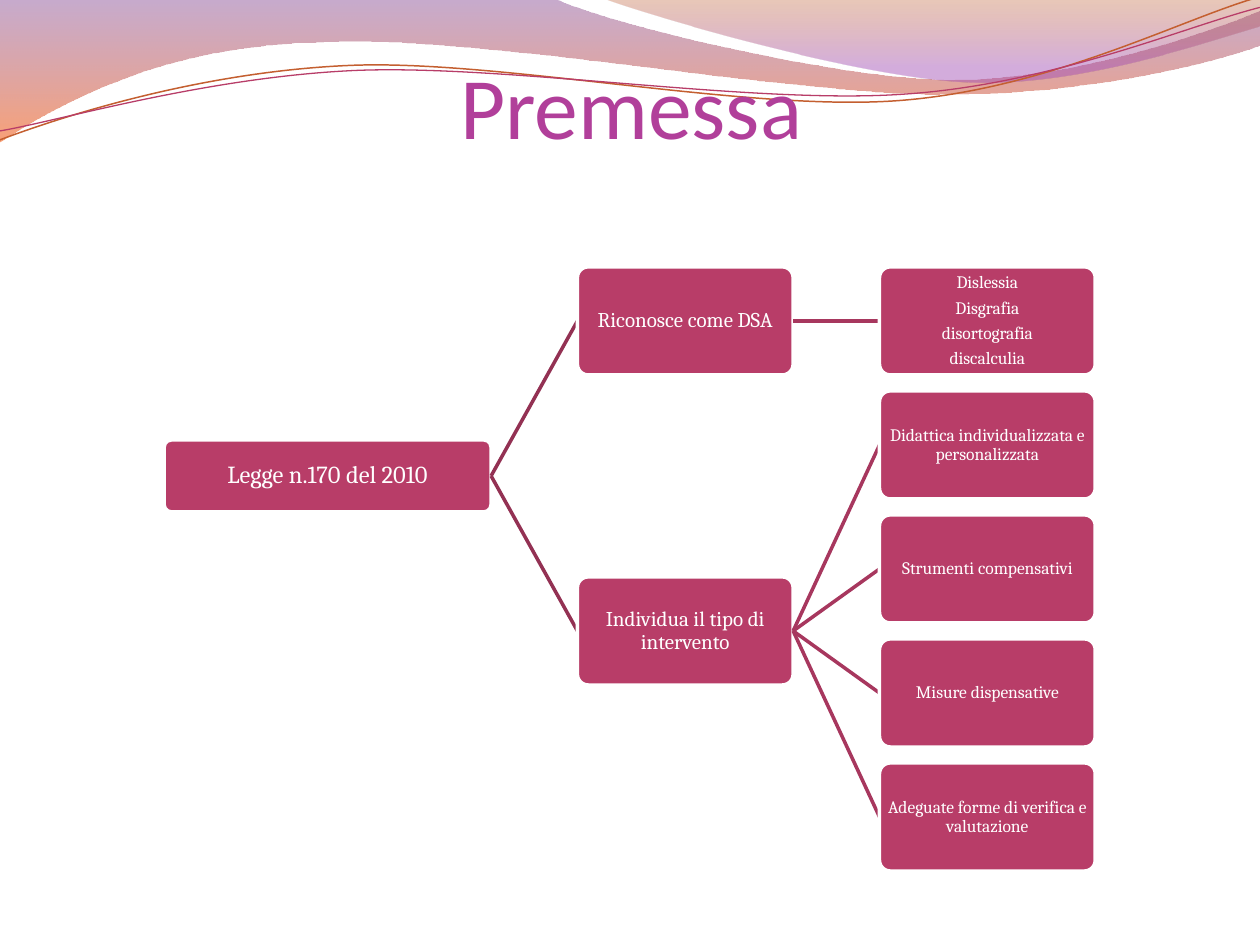
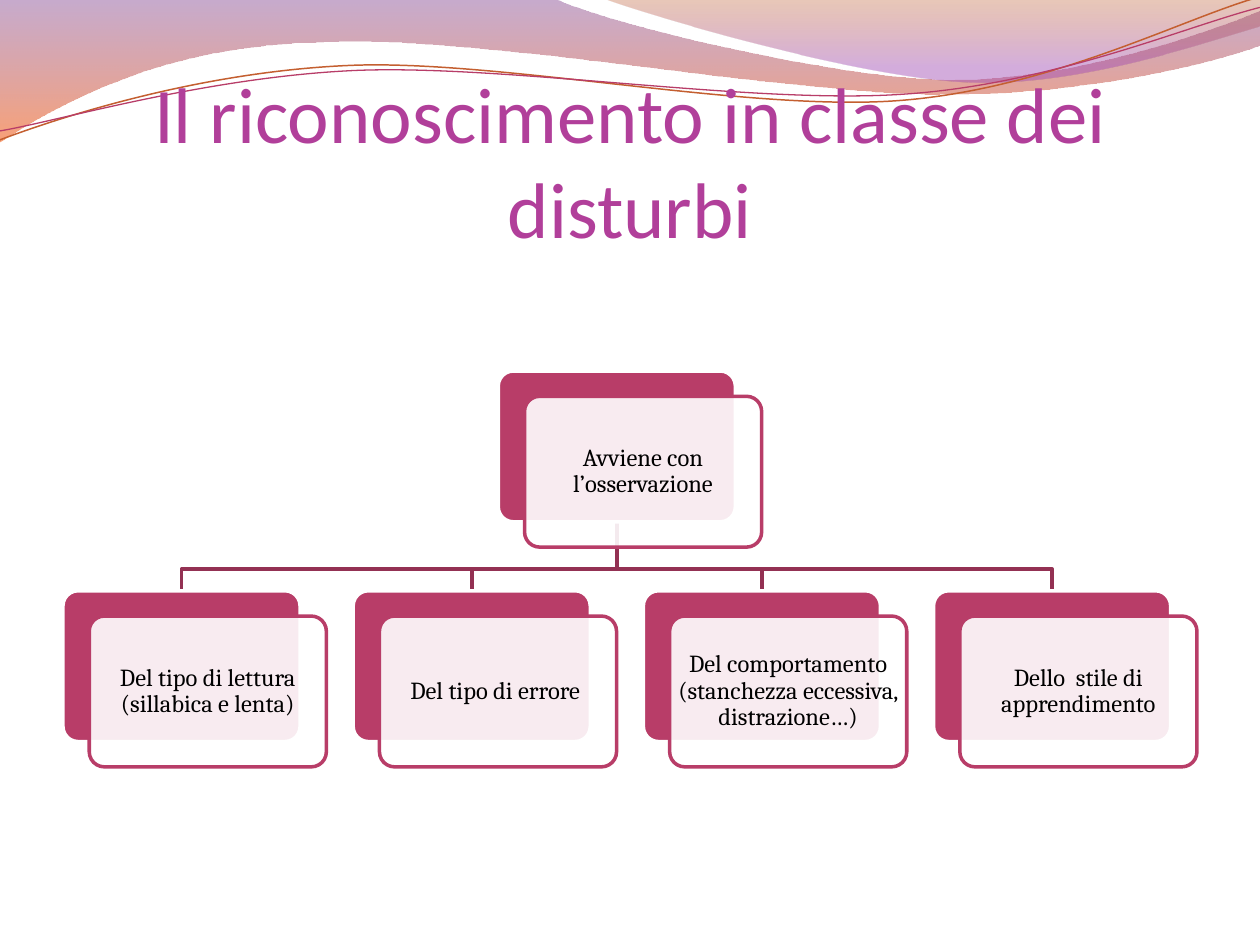
import pptx
import pptx.dml.color
import pptx.enum.shapes
import pptx.enum.text
import pptx.oxml.ns
import pptx.util
from lxml import etree

Cm, Pt = pptx.util.Cm, pptx.util.Pt
RGBColor = pptx.dml.color.RGBColor
qn = pptx.oxml.ns.qn
MIDDLE = pptx.enum.text.MSO_ANCHOR.MIDDLE
CENTER = pptx.enum.text.PP_ALIGN.CENTER

WHITE = RGBColor(0xFF, 0xFF, 0xFF)
BLACK = RGBColor(0x00, 0x00, 0x00)
TITLE = RGBColor(0xB1, 0x3F, 0x9A)
ROSE = RGBColor(0xB8, 0x3D, 0x68)
ROSE_DARK = RGBColor(0x93, 0x31, 0x53)
ROSE_MID = RGBColor(0xA7, 0x37, 0x5E)
ORANGE = RGBColor(0xC4, 0x5F, 0x30)
PURPLE = RGBColor(0x83, 0x45, 0x91)
FLAME = RGBColor(0xF3, 0x53, 0x07)
RUST = RGBColor(0xB7, 0x49, 0x15)
VIOLET = RGBColor(0xA1, 0x4B, 0xB4)

# Outlines in cm: two numbers are a corner, six are a Bézier curve.
# Gradient stops: position %, colour, opacity %.
BANDS = [
    ([(0, -0.02), (11.19, -0.02), (12.09, 0.43, 16.87, 1.6, 19.25, 1.6),
      (21.67, 1.6, 24.33, 0.66, 25.4, 0.23), (25.42, 0.91),
      (24.97, 1.12, 22.1, 1.93, 18.95, 1.9), (15.8, 1.9, 9.7, 0.71, 6.53, 0.86),
      (3.28, 0.89, 1.17, 2.11, -0.02, 2.87)],
     [(0, PURPLE, 45), (100, FLAME, 55)]),
    ([(12.17, -0.02), (12.93, 0.28, 17.32, 1.57, 19.53, 1.65),
      (21.74, 1.75, 24.41, 0.81, 25.4, 0.53), (25.4, 0)],
     [(0, RUST, 30), (80, VIOLET, 45)]),
]
WAVES = [
    ([(0, 2.82), (1.22, 2.36, 4.01, 1.45, 7.04, 1.32),
      (10.03, 1.19, 15.06, 2.26, 18.11, 2.03),
      (21.16, 1.8, 23.83, 0.38, 25.35, -0.05)], ORANGE, 0.85),
    ([(0, 2.64), (1.19, 2.44, 4.17, 1.55, 7.19, 1.42),
      (10.24, 1.3, 15.16, 2.11, 18.21, 1.9),
      (21.23, 1.7, 23.9, 0.53, 25.4, 0.15)], ROSE, 0.75),
]


def add_outline(s, segments, closed=False, color=None, width=0):
    """Draw corners and Bézier curves as one unfilled freeform."""
    corners = [(Cm(seg[-2]), Cm(seg[-1])) for seg in segments]
    fb = s.shapes.build_freeform(*corners[0])
    fb.add_line_segments(corners[1:], close=closed)
    sp = fb.convert_to_shape()
    for seg, line_to in zip(segments[1:], list(sp.element.iter(qn("a:lnTo")))):
        if len(seg) == 6:
            curve = etree.Element(qn("a:cubicBezTo"))
            for x, y in zip(seg[::2], seg[1::2]):
                etree.SubElement(curve, qn("a:pt"),
                                 x=str(Cm(x) - sp.left), y=str(Cm(y) - sp.top))
            line_to.getparent().replace(line_to, curve)
    sp.shadow.inherit = False
    sp.fill.background()
    if color is None:
        sp.line.fill.background()
    else:
        sp.line.color.rgb = color
        sp.line.width = Pt(width)
    return sp


def add_box(s, x, y, w, h, fill, line, text="", size=14, color=WHITE, inset=0):
    sp = s.shapes.add_shape(pptx.enum.shapes.MSO_SHAPE.ROUNDED_RECTANGLE,
                            Cm(x), Cm(y), Cm(w), Cm(h))
    sp.adjustments[0] = 0.1
    sp.shadow.inherit = False
    sp.fill.solid()
    sp.fill.fore_color.rgb = fill
    sp.line.color.rgb = line
    sp.line.width = Pt(2)
    if text:
        tf = sp.text_frame
        tf.text = text
        tf.word_wrap = True
        tf.vertical_anchor = MIDDLE
        tf.margin_left = tf.margin_right = tf.margin_top = tf.margin_bottom = Cm(inset)
        for p in tf.paragraphs:
            p.alignment = CENTER
            p.line_spacing = 0.9
            p.space_after = Pt(0.35 * size)
            for r in p.runs:
                r.font.name = "Cambria"
                r.font.size = Pt(size)
                r.font.color.rgb = color
    return sp


prs = pptx.Presentation()
prs.slide_width, prs.slide_height = Cm(25.4), Cm(19.05)

# Shared bands, waves and title
slides = []
for title, left, top, size in [
        ("Premessa", 1.3, 0, 50),
        ("Il riconoscimento in classe dei disturbi", 1.27, 1.95, 45)]:
    s = prs.slides.add_slide(prs.slide_layouts[5])
    for segments, stops in BANDS:
        sp = add_outline(s, segments, closed=True)
        spPr = sp.element.spPr
        grad = etree.Element(qn("a:gradFill"), rotWithShape="1")
        gsLst = etree.SubElement(grad, qn("a:gsLst"))
        for pos, color, opacity in stops:
            gs = etree.SubElement(gsLst, qn("a:gs"), pos=str(pos * 1000))
            clr = etree.SubElement(gs, qn("a:srgbClr"), val=str(color))
            etree.SubElement(clr, qn("a:alpha"), val=str(opacity * 1000))
        etree.SubElement(grad, qn("a:lin"), ang="5400000", scaled="1")
        spPr.replace(spPr.find(qn("a:noFill")), grad)
    for segments, color, width in WAVES:
        add_outline(s, segments, color=color, width=width)

    ph = s.shapes.title
    ph.element.getparent().append(ph.element)
    ph.left, ph.top, ph.width, ph.height = Cm(left), Cm(top), Cm(22.86), Cm(3.17)
    tf = ph.text_frame
    tf.text = title
    tf.word_wrap = True
    tf.auto_size = pptx.enum.text.MSO_AUTO_SIZE.NONE
    tf.vertical_anchor = pptx.enum.text.MSO_ANCHOR.BOTTOM
    tf.margin_left = tf.margin_right = tf.margin_bottom = 0
    tf.margin_top = Cm(0.13)
    p = tf.paragraphs[0]
    p.alignment = CENTER
    font = p.runs[0].font
    font.name, font.size, font.color.rgb = "Calibri", Pt(size), TITLE
    slides.append(s)

# Slide 1: the law, its two provisions and their details
s = slides[0]
BRANCHES = [
    ("Riconosce come DSA", ["Dislessia\nDisgrafia\ndisortografia\ndiscalculia"]),
    ("Individua il tipo di intervento",
     ["Didattica individualizzata e personalizzata", "Strumenti compensativi",
      "Misure dispensative", "Adeguate forme di verifica e valutazione"]),
]
BOX_W, BOX_H, ROW_TOP, ROW_STEP = 4.35, 2.18, 5.38, 2.5
root = add_box(s, 3.31, 8.87, 6.59, 1.45, ROSE, WHITE, "Legge n.170 del 2010", 14)
links = []
row = 0
for provision, details in BRANCHES:
    middle = row + (len(details) - 1) / 2
    branch = add_box(s, 11.64, ROW_TOP + middle * ROW_STEP, BOX_W, BOX_H,
                     ROSE, WHITE, provision, 12)
    links.append((root, branch, ROSE_DARK))
    for detail in details:
        leaf = add_box(s, 17.73, ROW_TOP + row * ROW_STEP, BOX_W, BOX_H,
                       ROSE, WHITE, detail, 10)
        links.append((branch, leaf, ROSE_MID))
        row += 1
for parent, child, color in links:
    cn = s.shapes.add_connector(pptx.enum.shapes.MSO_CONNECTOR.STRAIGHT, 0, 0, 0, 0)
    cn.begin_connect(parent, 3)
    cn.end_connect(child, 1)
    cn.line.color.rgb = color
    cn.line.width = Pt(2)
    etree.SubElement(cn.element.spPr, qn("a:effectLst"))
    child.element.addprevious(cn.element)

# Slide 2: observation and what it looks at
s = slides[1]
ASPECTS = ["Del tipo di lettura (sillabica e lenta)", "Del tipo di errore ",
           "Del comportamento (stanchezza eccessiva, distrazione…)",
           "Dello  stile di apprendimento"]
CARD_W, CARD_H, ASPECT_TOP = 4.78, 3.04, 11.91
lefts = [1.27 + 5.85 * i for i in range(len(ASPECTS))]
root_left = sum(lefts) / len(lefts)
trunk = root_left + CARD_W / 2
for left in reversed(lefts):
    x = left + CARD_W / 2
    add_outline(s, [(trunk, 10.52), (trunk, 11.47), (x, 11.47), (x, ASPECT_TOP)],
                color=ROSE_DARK, width=2)
cards = [(root_left, 7.48, "Avviene con l’osservazione")]
cards += [(left, ASPECT_TOP, aspect) for left, aspect in zip(lefts, ASPECTS)]
for x, y, text in cards:
    add_box(s, x, y, CARD_W, CARD_H, ROSE, WHITE)
    front = add_box(s, x + 0.53, y + 0.51, CARD_W, CARD_H, WHITE, ROSE,
                    text, 14, BLACK, 0.06)
    clr = front.element.spPr.find(qn("a:solidFill")).find(qn("a:srgbClr"))
    etree.SubElement(clr, qn("a:alpha"), val="90000")

prs.save("out.pptx")
